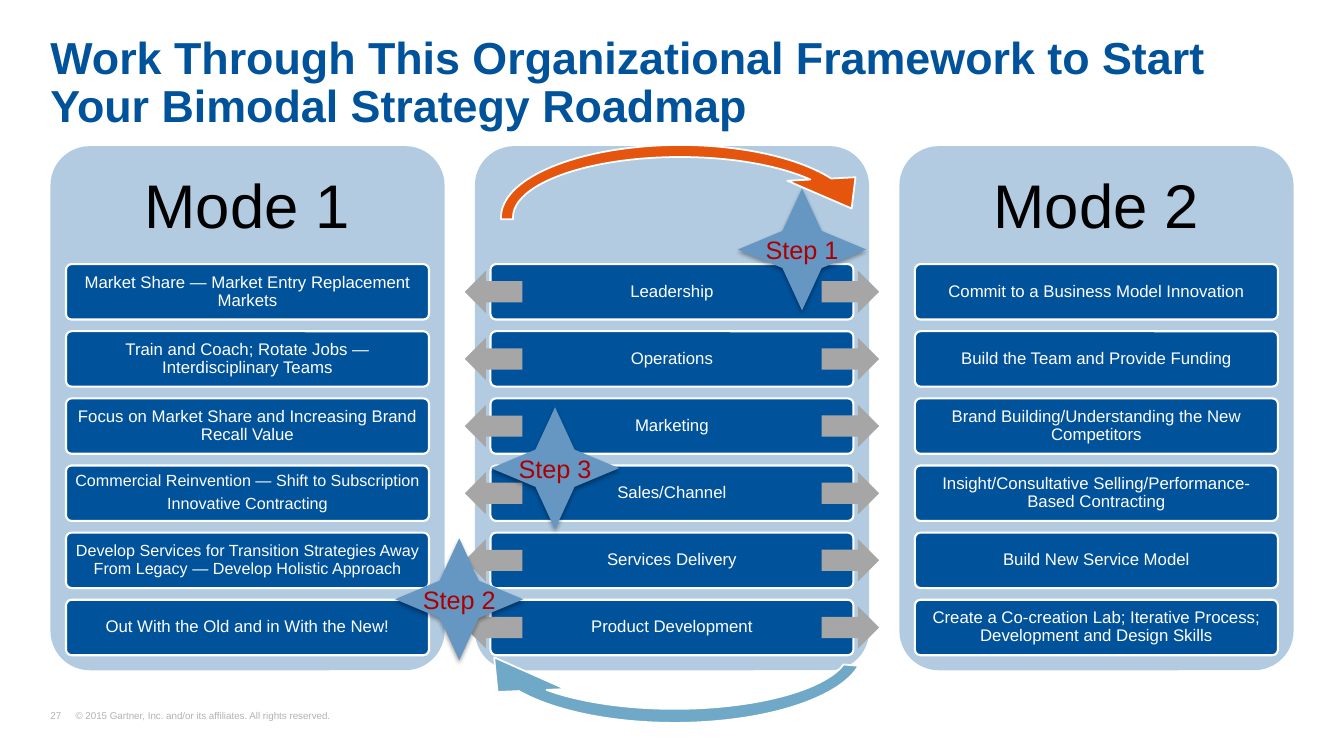
from lxml import etree
from pptx import Presentation
from pptx.dml.color import RGBColor
from pptx.enum.shapes import MSO_SHAPE
from pptx.enum.text import MSO_ANCHOR, MSO_AUTO_SIZE, PP_ALIGN
from pptx.oxml.ns import qn
from pptx.util import Inches, Pt

ROUNDED = MSO_SHAPE.ROUNDED_RECTANGLE
ARROW = MSO_SHAPE.RIGHT_ARROW
STAR = MSO_SHAPE.STAR_4_POINT
LOOP = MSO_SHAPE.CIRCULAR_ARROW
TOP, MIDDLE, BOTTOM = MSO_ANCHOR.TOP, MSO_ANCHOR.MIDDLE, MSO_ANCHOR.BOTTOM
LEFT, CENTER = PP_ALIGN.LEFT, PP_ALIGN.CENTER
FIXED_SIZE = MSO_AUTO_SIZE.NONE

FONT = "Arial"
COLORS = {
    "navy": "00529B", "panel": "B2CBE1", "white": "FFFFFF", "black": "000000",
    "gray": "A6A6A6", "footer": "B2B2B2", "star": "6697C3", "step": "AC0000",
    "teal": "6FA9C7", "orange": "E5550D",
}

MARGIN = 0.5
PANEL_TOP, PANEL_WIDTH, PANEL_HEIGHT = 1.45, 3.91, 5.2
COLUMN_PITCH = 4.21
CARD_TOP, CARD_WIDTH, CARD_HEIGHT = 2.62, 3.6, 0.55
ROW_PITCH = 0.666
CARD_INDENT = (PANEL_WIDTH - CARD_WIDTH) / 2
ARROW_WIDTH, ARROW_HEIGHT = 0.57, 0.42
ARROW_OVERHANG = 0.1
STAR_WIDTH, STAR_HEIGHT = 1.27, 1.21

# Each column: heading, then (text, size) of its cards
COLUMNS = [
    ("Mode 1", [
        ("Market Share — Market Entry Replacement Markets", 12),
        ("Train and Coach; Rotate Jobs — Interdisciplinary Teams", 12),
        ("Focus on Market Share and Increasing Brand Recall Value", 12),
        ("Commercial Reinvention — Shift to Subscription\nInnovative Contracting", 11.5),
        ("Develop Services for Transition Strategies Away From Legacy — "
         "Develop Holistic Approach", 11.5),
        ("Out With the Old and in With the New!", 12),
    ]),
    ("", [
        ("Leadership", 12),
        ("Operations", 12),
        ("Marketing", 12),
        ("Sales/Channel", 12),
        ("Services Delivery", 12),
        ("Product Development", 12),
    ]),
    ("Mode 2", [
        ("Commit to a Business Model Innovation", 12),
        ("Build the Team and Provide Funding", 12),
        ("Brand Building/Understanding the New Competitors", 12),
        ("Insight/Consultative Selling/Performance-Based Contracting", 12),
        ("Build New Service Model", 12),
        ("Create a Co-creation Lab; Iterative Process; Development and Design Skills", 12),
    ]),
]
STEPS = [("Step 1", 7.32, 1.87), ("Step 2", 3.92, 5.34), ("Step 3", 4.87, 4.04)]


def color(name):
    return RGBColor.from_string(COLORS[name])


def column_left(column):
    return MARGIN + column * COLUMN_PITCH


def row_top(row):
    return CARD_TOP + row * ROW_PITCH


def write(shape, text, size, ink, bold=False, align=CENTER, anchor=MIDDLE,
          insets=(0, 0, 0, 0), wrap=True, line_spacing=0.9, space_after=0, tab=None):
    """Fill a shape with text, one paragraph per line; insets run left, top, right, bottom."""
    frame = shape.text_frame
    frame.auto_size = FIXED_SIZE
    frame.word_wrap = wrap
    frame.vertical_anchor = anchor
    (frame.margin_left, frame.margin_top,
     frame.margin_right, frame.margin_bottom) = map(Inches, insets)
    frame.text = text
    for paragraph in frame.paragraphs:
        paragraph.alignment = align
        paragraph.line_spacing = line_spacing
        paragraph.space_after = Pt(space_after)
        if tab:
            tabs = etree.SubElement(paragraph._p.get_or_add_pPr(), qn("a:tabLst"))
            etree.SubElement(tabs, qn("a:tab"), pos=str(Inches(tab)), algn="l")
        font = paragraph.font
        font.name, font.size, font.bold = FONT, Pt(size), bold
        font.color.rgb = color(ink)


def add_block(slide, kind, box, fill, line_width=0, adjustments=(), rotation=0):
    """Add a preset shape; a line width above zero gives it a white outline."""
    shape = slide.shapes.add_shape(kind, *map(Inches, box))
    shape.shadow.inherit = False
    shape.rotation = rotation
    shape.fill.solid()
    shape.fill.fore_color.rgb = color(fill)
    if line_width:
        shape.line.color.rgb = color("white")
        shape.line.width = Pt(line_width)
    else:
        shape.line.fill.background()
    for index, value in enumerate(adjustments):
        shape.adjustments[index] = value
    return shape


def add_soft_shadow(shape):
    effects = shape._element.spPr.find(qn("a:effectLst"))
    shadow = etree.SubElement(
        effects, qn("a:outerShdw"), blurRad=str(Pt(3.1)), dist=str(Pt(1.8)),
        dir=str(90 * 60000), rotWithShape="0")
    shade = etree.SubElement(shadow, qn("a:srgbClr"), val=COLORS["black"])
    etree.SubElement(shade, qn("a:alpha"), val="35000")


def add_title(slide, text):
    title = slide.shapes.title
    title.left, title.top, title.width, title.height = map(
        Inches, (MARGIN, 0.25, 12.33, 1.07))
    write(title, text, 32, "navy", bold=True, align=LEFT, anchor=TOP,
          insets=(0, 0.1, 0, 0))


def add_column(slide, column, heading, cards):
    left = column_left(column)
    panel = add_block(slide, ROUNDED, (left, PANEL_TOP, PANEL_WIDTH, PANEL_HEIGHT),
                      "panel", adjustments=[0.1])
    if heading:
        write(panel, heading, 44, "black", anchor=TOP, insets=(0.18, 0.18, 0.18, 3.75))
    for row, (text, size) in enumerate(cards):
        card = add_block(
            slide, ROUNDED, (left + CARD_INDENT, row_top(row), CARD_WIDTH, CARD_HEIGHT),
            "navy", line_width=1.5, adjustments=[0.1])
        write(card, text, size, "white", insets=(0.05, 0.04, 0.05, 0.04), space_after=4)


def add_side_arrows(slide, column, rows):
    left_edge = column_left(column) - ARROW_OVERHANG
    right_edge = column_left(column) + PANEL_WIDTH + ARROW_OVERHANG - ARROW_WIDTH
    for row in range(rows):
        top = row_top(row) + (CARD_HEIGHT - ARROW_HEIGHT) / 2
        for left, rotation in ((left_edge, 180), (right_edge, 0)):
            add_block(slide, ARROW, (left, top, ARROW_WIDTH, ARROW_HEIGHT), "gray",
                      rotation=rotation)


def add_step(slide, text, left, top):
    star = add_block(slide, STAR, (left, top, STAR_WIDTH, STAR_HEIGHT), "star",
                     adjustments=[0.216])
    add_soft_shadow(star)
    write(star, text, 18, "step", wrap=False, line_spacing=1.0)


def add_footer(slide, text):
    footer = slide.shapes.add_textbox(*map(Inches, (MARGIN, 7.05, 3.35, 0.11)))
    write(footer, text, 7, "footer", align=LEFT, anchor=BOTTOM, tab=0.25)


def main():
    presentation = Presentation()
    presentation.slide_width, presentation.slide_height = Inches(13.33), Inches(7.5)
    slide = presentation.slides.add_slide(presentation.slide_layouts[5])

    add_title(slide, "Work Through This Organizational Framework to Start "
                     "Your Bimodal Strategy Roadmap")
    add_footer(slide, "27\t© 2015 Gartner, Inc. and/or its affiliates. All rights reserved.")
    for column, (heading, cards) in enumerate(COLUMNS):
        add_column(slide, column, heading, cards)
    add_side_arrows(slide, 1, len(COLUMNS[1][1]))
    for step in STEPS:
        add_step(slide, *step)
    add_block(slide, LOOP, (4.55, 5.45, 4.28, 1.99), "teal", line_width=1.25, rotation=180,
              adjustments=[0.07, 8.11, 206.43, 111.01, 0.17])
    add_block(slide, LOOP, (4.69, 1.16, 4.11, 1.99), "orange", line_width=1.25,
              adjustments=[0.06, 7.33, 206.92, 107.59, 0.17])
    presentation.save("out.pptx")


if __name__ == "__main__":
    main()
